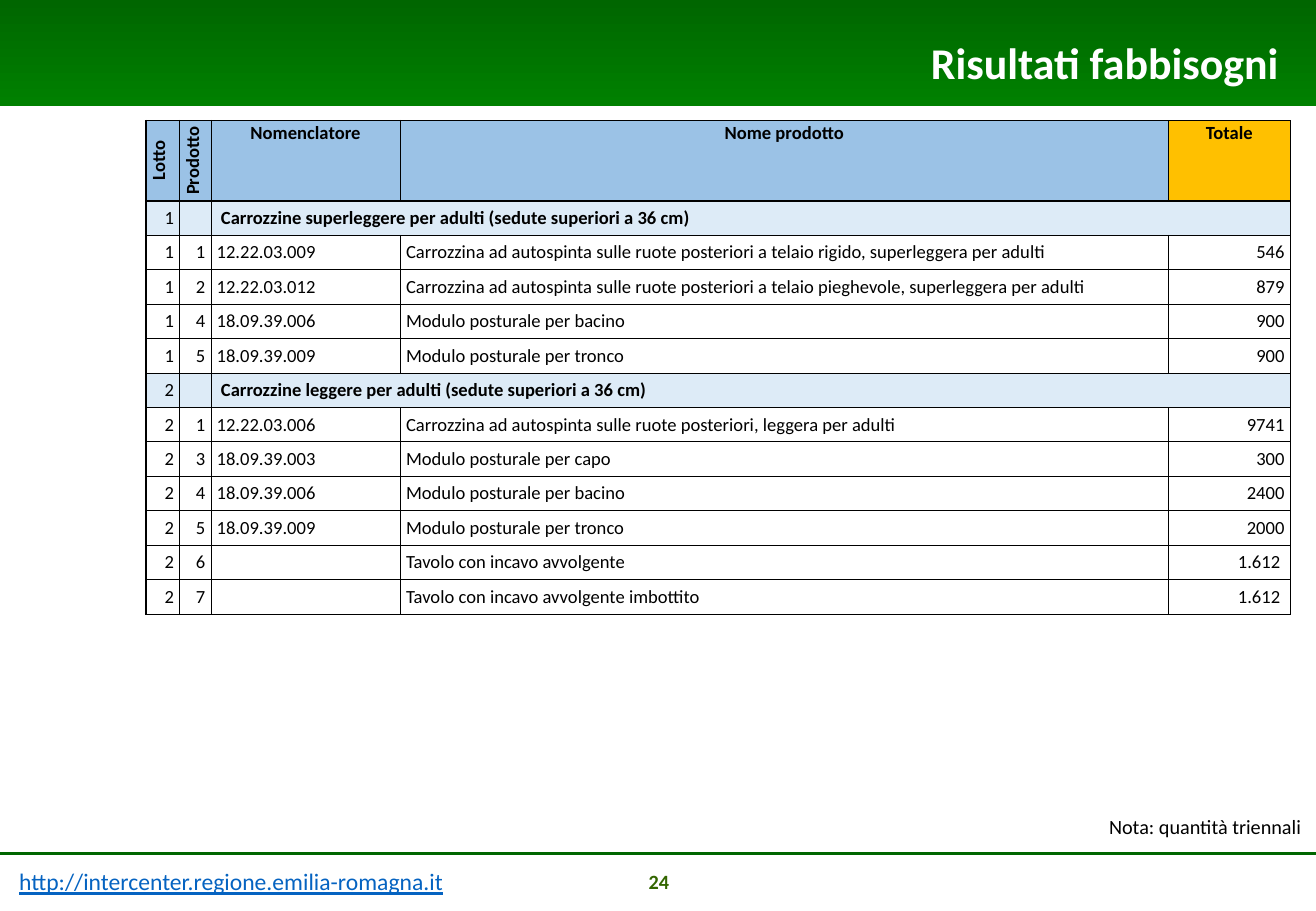
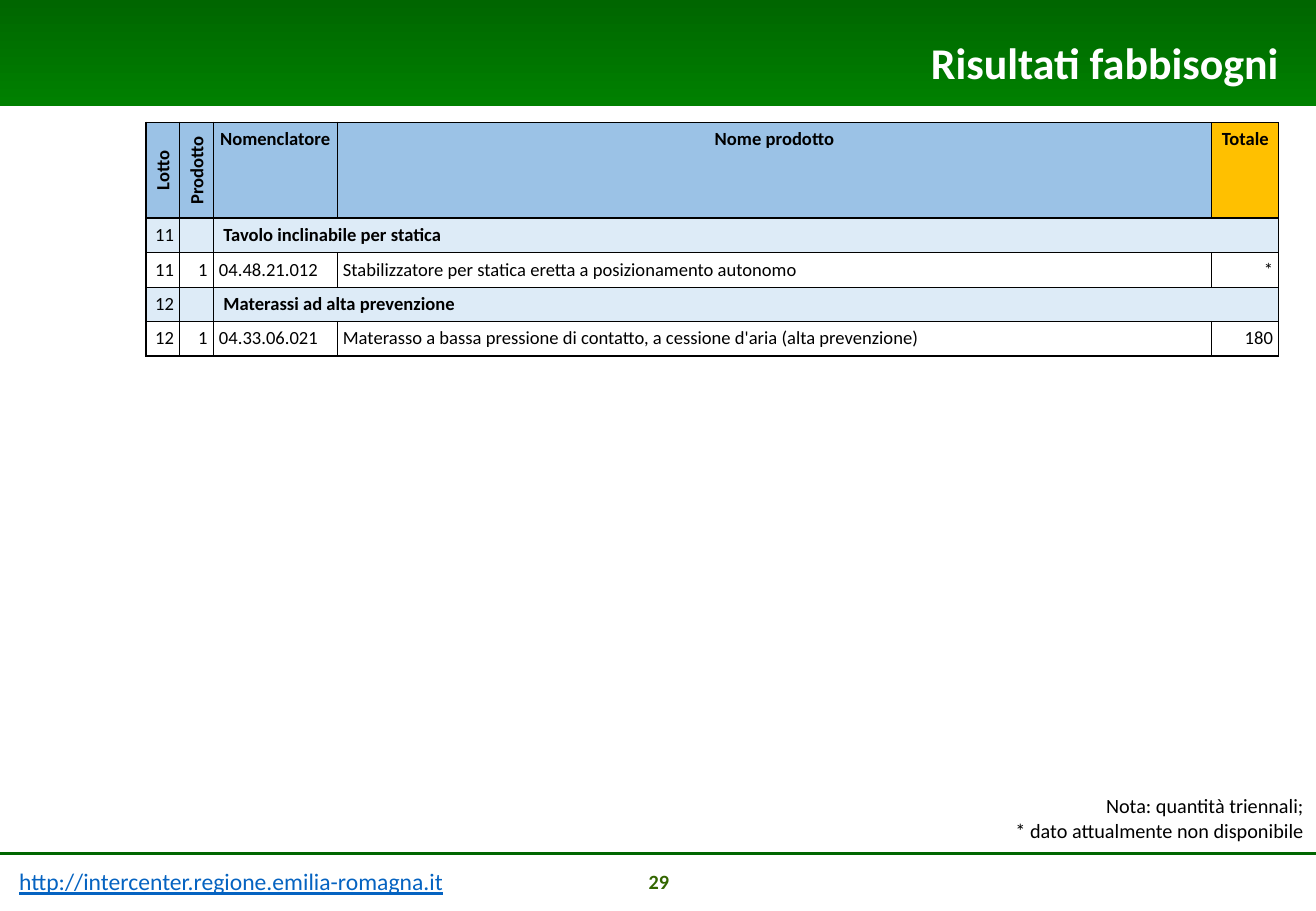
"""Build two slides with tables of estimated needs by lot and product."""
import lxml.etree
import pptx
import pptx.dml.color
import pptx.enum.shapes
import pptx.enum.text
import pptx.oxml.ns
import pptx.util
from pptx.util import Cm, Pt

ALIGN = pptx.enum.text.PP_ALIGN
ANCHOR = pptx.enum.text.MSO_ANCHOR
SHAPE = pptx.enum.shapes.MSO_SHAPE
FONT = "Calibri"
BLACK, WHITE = "000000", "FFFFFF"
DARK_GREEN, GREEN, NUMBER_GREEN = "006600", "008000", "336600"
HEADER_BLUE, SECTION_BLUE, TOTAL_GOLD, LINK_BLUE = "9BC2E6", "DDEBF7", "FFC000", "0563C1"
WIDTH, HEIGHT = Pt(780), Pt(540)
ROW_HEIGHT, CELL_MARGIN, SECTION_MARGIN = Cm(0.72), Cm(0.12), Cm(0.21)
THIN, THICK = Pt(0.5), Pt(1)
HEADERS = ("Lotto", "Prodotto", "Nomenclatore", "Nome prodotto", "Totale")
COLUMN_ALIGN = (ALIGN.RIGHT, ALIGN.RIGHT, ALIGN.LEFT, ALIGN.LEFT, ALIGN.RIGHT)

PAGES = [
    {
        "number": "24",
        "top": 2.52,
        "columns": (0.71, 0.65, 3.96, 16.06, 2.55),
        "header_height": 1.68,
        "header_margin": 0.03,
        "closed": False,
        "rows": [
            ("1", "", "Carrozzine superleggere per adulti (sedute superiori a 36 cm)"),
            ("1", "1", "12.22.03.009", "Carrozzina ad autospinta sulle ruote posteriori a telaio rigido, superleggera per adulti", "546"),
            ("1", "2", "12.22.03.012", "Carrozzina ad autospinta sulle ruote posteriori a telaio pieghevole, superleggera per adulti", "879"),
            ("1", "4", "18.09.39.006", "Modulo posturale per bacino", "900"),
            ("1", "5", "18.09.39.009", "Modulo posturale per tronco", "900"),
            ("2", "", "Carrozzine leggere per adulti (sedute superiori a 36 cm)"),
            ("2", "1", "12.22.03.006", "Carrozzina ad autospinta sulle ruote posteriori, leggera per adulti", "9741"),
            ("2", "3", "18.09.39.003", "Modulo posturale per capo", "300"),
            ("2", "4", "18.09.39.006", "Modulo posturale per bacino", "2400"),
            ("2", "5", "18.09.39.009", "Modulo posturale per tronco", "2000"),
            ("2", "6", "", "Tavolo con incavo avvolgente", "1.612 "),
            ("2", "7", "", "Tavolo con incavo avvolgente imbottito", "1.612 "),
        ],
        "note_left": 20.46,
        "note_top": 16.9,
        "note": ["Nota: quantità triennali"],
    },
    {
        "number": "29",
        "top": 2.56,
        "columns": (0.71, 0.7, 2.59, 18.29, 1.4),
        "header_height": 2,
        "header_margin": 0.12,
        "closed": True,
        "rows": [
            ("11", "", "Tavolo inclinabile per statica"),
            ("11", "1", "04.48.21.012", "Stabilizzatore per statica eretta a posizionamento autonomo", "*"),
            ("12", "", "Materassi ad alta prevenzione"),
            ("12", "1", "04.33.06.021", "Materasso a bassa pressione di contatto, a cessione d'aria (alta prevenzione)", "180"),
        ],
        "note_left": 20.51,
        "note_top": 16.47,
        "note": ["Nota: quantità triennali;", "* dato attualmente non disponibile"],
    },
]


def color(value):
    return pptx.dml.color.RGBColor.from_string(value)


def write(text_frame, lines, size, text_color, alignment, bold=False):
    text_frame.word_wrap = True
    paragraph = text_frame.paragraphs[0]
    paragraph.alignment = alignment
    for index, line in enumerate(lines):
        if index:
            paragraph.add_line_break()
        run = paragraph.add_run()
        run.text = line
        run.font.name = FONT
        run.font.size = Pt(size)
        run.font.bold = bold
        run.font.color.rgb = color(text_color)
    return run


presentation = pptx.Presentation()
presentation.slide_width, presentation.slide_height = WIDTH, HEIGHT
layout = presentation.slide_layouts[5]
slides = [presentation.slides.add_slide(layout) for page in PAGES]

shapes = slides[0].shapes
band = shapes.add_shape(SHAPE.RECTANGLE, 0, 0, WIDTH, Cm(2.21))
band.fill.gradient()
band.fill.gradient_angle = 270
for stop, position, value in zip(band.fill.gradient_stops, (0, 1), (DARK_GREEN, GREEN)):
    stop.position = position
    stop.color.rgb = color(value)

number_disc = shapes.add_shape(SHAPE.OVAL, Cm(13), Cm(17.91), Cm(1.45), Cm(1.07))
number_disc.fill.solid()
number_disc.fill.fore_color.rgb = color(WHITE)
for shape in (band, number_disc):
    shape.line.fill.background()
    shape.shadow.inherit = False

address = shapes.add_textbox(Cm(0.15), Cm(18.01), Cm(12.22), Cm(0.86))
address_run = write(address.text_frame, ["http://intercenter.regione.emilia-romagna.it"], 14, LINK_BLUE, ALIGN.LEFT)
address_run.font.underline = True

footer_line = shapes.add_connector(pptx.enum.shapes.MSO_CONNECTOR.STRAIGHT, 0, Cm(17.85), WIDTH, Cm(17.85))
footer_line.line.color.rgb = color(DARK_GREEN)
footer_line.line.width = Pt(1.75)
lxml.etree.SubElement(footer_line._element.spPr, pptx.oxml.ns.qn("a:effectLst"))

for shape in (band, number_disc, address, footer_line):
    layout.shapes._spTree.append(shape._element)

for slide, page in zip(slides, PAGES):
    title = slide.shapes.title
    title.left, title.top, title.width, title.height = Cm(1.65), Cm(0.61), Cm(25.35), Cm(1.37)
    title.text_frame.vertical_anchor = ANCHOR.MIDDLE
    title.text_frame.auto_size = pptx.enum.text.MSO_AUTO_SIZE.NONE
    write(title.text_frame, ["Risultati fabbisogni"], 26, WHITE, ALIGN.RIGHT, True)

    number = slide.shapes.add_textbox(Cm(10.92), Cm(18.08), Cm(5.72), Cm(0.69))
    number.text_frame.vertical_anchor = ANCHOR.MIDDLE
    write(number.text_frame, [page["number"]], 12, NUMBER_GREEN, ALIGN.CENTER, True)

    rows = [HEADERS] + page["rows"]
    header_height = Cm(page["header_height"])
    table = slide.shapes.add_table(
        len(rows), len(HEADERS), Cm(3.05), Cm(page["top"]),
        Cm(sum(page["columns"])), header_height + ROW_HEIGHT * len(page["rows"]),
    ).table
    table.first_row = table.horz_banding = False
    for column, width in zip(table.columns, page["columns"]):
        column.width = Cm(width)

    for row_index, values in enumerate(rows):
        is_header = row_index == 0
        is_section = len(values) == 3
        table.rows[row_index].height = header_height if is_header else ROW_HEIGHT
        if is_section:
            table.cell(row_index, 2).merge(table.cell(row_index, 4))
        for column_index in range(len(HEADERS)):
            cell = table.cell(row_index, column_index)
            paragraph = cell.text_frame.paragraphs[0]
            text = values[column_index] if column_index < len(values) else ""
            if text:
                alignment = ALIGN.CENTER if is_header else COLUMN_ALIGN[column_index]
                bold = is_header or is_section and column_index == 2
                write(cell.text_frame, [text], 11, BLACK, alignment, bold)
            else:
                paragraph._p.get_or_add_endParaRPr().set("sz", "1100")

            margin = Cm(page["header_margin"]) if is_header else CELL_MARGIN
            cell.margin_left = cell.margin_right = cell.margin_top = cell.margin_bottom = margin
            if is_section and column_index == 2:
                cell.margin_left = SECTION_MARGIN

            properties = cell._tc.get_or_add_tcPr()
            if is_header and column_index < 2:
                properties.set("vert", "vert270")
            is_last_column = column_index == len(values) - 1
            thick_sides = {
                "L": column_index == 0,
                "R": is_last_column and (is_header or page["closed"]),
                "T": row_index == 1 or is_header and not is_last_column,
                "B": is_header or page["closed"] and row_index == len(rows) - 1,
            }
            for side, is_thick in thick_sides.items():
                border = lxml.etree.SubElement(properties, pptx.oxml.ns.qn("a:ln" + side))
                border.set("w", str(THICK if is_thick else THIN))
                border_fill = lxml.etree.SubElement(border, pptx.oxml.ns.qn("a:solidFill"))
                lxml.etree.SubElement(border_fill, pptx.oxml.ns.qn("a:srgbClr")).set("val", BLACK)

            if is_header:
                fill_color = TOTAL_GOLD if is_last_column else HEADER_BLUE
            else:
                fill_color = SECTION_BLUE if is_section else WHITE
            cell.fill.solid()
            cell.fill.fore_color.rgb = color(fill_color)

    note = slide.shapes.add_textbox(
        Cm(page["note_left"]), Cm(page["note_top"]), Cm(7), Cm(0.25 + 0.51 * len(page["note"]))
    )
    write(note.text_frame, page["note"], 12, BLACK, ALIGN.RIGHT)

presentation.save("out.pptx")
